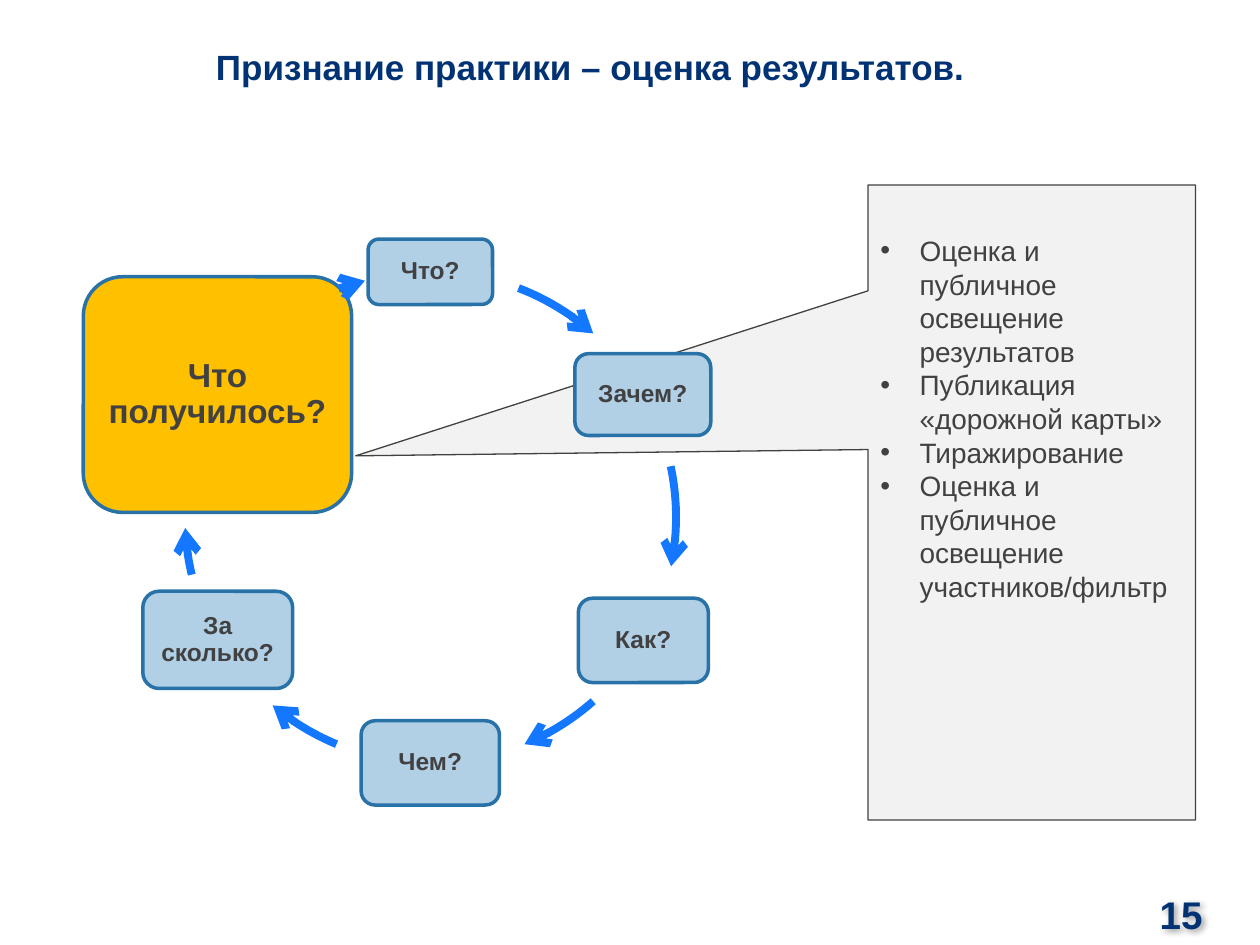
import math

import pptx
import pptx.dml.color
import pptx.enum.shapes
import pptx.enum.text
import pptx.oxml.ns
import pptx.util
from lxml import etree

Cm = pptx.util.Cm
Pt = pptx.util.Pt
SHAPE = pptx.enum.shapes.MSO_SHAPE
ALIGN = pptx.enum.text.PP_ALIGN
ANCHOR = pptx.enum.text.MSO_ANCHOR
qn = pptx.oxml.ns.qn

COLORS = {"navy": "003274", "text": "414142", "panel": "F2F2F2", "node": "B1CFE5",
          "edge": "2972A7", "result": "FFC000", "arrow": "1378FF", "shadow": "000000"}
CYCLE = [
    ("Что?", (5.74, 0, 2.51, 1.32), (-69, -48.5)),
    ("Зачем?", (9.91, 2.31, 2.74, 1.65), (-12, 11.5)),
    ("Как?", (9.98, 7.24, 2.62, 1.7), (48.5, 67.5)),
    ("Чем?", (5.6, 9.71, 2.79, 1.7), (112.5, 130)),
    ("За сколько?", (1.2, 7.1, 3.02, 1.96), (166.5, 177.5)),
    ("Что получилось?", (0, 0.76, 5.41, 4.75), (252, 254.5)),
]
CENTER, RADIUS = (7, 5.61), 4.95
OUTCOMES = [
    "Оценка и публичное освещение результатов",
    "Публикация «дорожной карты»",
    "Тиражирование",
    "Оценка и публичное освещение участников/фильтр",
]


def rgb(name):
    """Return the palette colour with this name."""
    return pptx.dml.color.RGBColor.from_string(COLORS[name])


def set_attrs(obj, values):
    """Set each attribute of obj named in values."""
    for name, value in values.items():
        setattr(obj, name, value)


def place(sp, box):
    """Move and size a shape to a box in centimetres."""
    set_attrs(sp, dict(zip(("left", "top", "width", "height"), map(Cm, box))))


def add_xml(parent, tag, **attrs):
    """Append a drawing element with the given attributes."""
    return etree.SubElement(parent, qn(f"a:{tag}"), {k: str(v) for k, v in attrs.items()})


def set_frame(tf, inset, **values):
    """Give a text frame equal margins, wrapping and centred anchoring."""
    margins = {f"margin_{side}": Cm(inset) for side in ("left", "top", "right", "bottom")}
    set_attrs(tf, {"word_wrap": True, "vertical_anchor": ANCHOR.MIDDLE, **margins, **values})


def write(p, text, color, size, bold=True, **values):
    """Write one formatted run into a paragraph."""
    r = p.add_run()
    r.text = text
    set_attrs(r.font, {"name": "Arial", "size": Pt(size), "bold": bold})
    r.font.color.rgb = rgb(color)
    set_attrs(p, values)


def add_box(s, kind, box, fill, line, width):
    """Add a filled and outlined preset shape without shadow."""
    sp = s.shapes.add_shape(kind, *map(Cm, box))
    sp.shadow.inherit = False
    sp.fill.solid()
    sp.fill.fore_color.rgb = rgb(fill)
    sp.line.color.rgb = rgb(line)
    sp.line.width = Pt(width)
    return sp


def add_title(s, box):
    """Place and fill the title placeholder."""
    sp = s.shapes.title
    place(sp, box)
    set_frame(sp.text_frame, 0)
    write(sp.text_frame.paragraphs[0], "Признание практики – оценка результатов.",
          "navy", 20, alignment=ALIGN.CENTER)


def add_number(s, box):
    """Add the page number with a soft shadow."""
    sp = s.shapes.add_textbox(*map(Cm, box))
    effects = add_xml(sp._element.spPr, "effectLst")
    shadow = add_xml(effects, "outerShdw", blurRad=Pt(4), dist=Pt(2), dir=2700000)
    add_xml(add_xml(shadow, "srgbClr", val=COLORS["shadow"]), "alpha", val=40000)
    set_frame(sp.text_frame, 0, margin_right=Cm(0.45))
    write(sp.text_frame.paragraphs[0], "15", "navy", 22, alignment=ALIGN.RIGHT)


def add_callout(s, box):
    """Add the callout with the bulleted outcomes."""
    sp = add_box(s, SHAPE.RECTANGULAR_CALLOUT, box, "panel", "text", 0.75)
    tip = (-13.63, -0.94)
    for i in range(2):
        sp.adjustments[i] = tip[i] / box[2 + i]
    tf = sp.text_frame
    set_frame(tf, 0.25, margin_top=Cm(0.98), vertical_anchor=ANCHOR.TOP)
    for i, text in enumerate(OUTCOMES):
        p = tf.add_paragraph() if i else tf.paragraphs[0]
        ppr = p._p.get_or_add_pPr()
        ppr.set("marL", str(Cm(0.79)))
        ppr.set("indent", str(-Cm(0.79)))
        add_xml(ppr, "buFont", typeface="Arial")
        add_xml(ppr, "buChar", char="•")
        write(p, text, "text", 16, bold=False, alignment=ALIGN.LEFT)


def add_node(s, box, text, fill, size, inset):
    """Add one rounded step of the cycle."""
    sp = add_box(s, SHAPE.ROUNDED_RECTANGLE, box, fill, "edge", 2)
    set_frame(sp.text_frame, inset)
    write(sp.text_frame.paragraphs[0], text, "text", size,
          alignment=ALIGN.CENTER, line_spacing=0.9)


def add_arc(s, box, start, end, steps=12):
    """Add an arrow along the circle inscribed in a square box, between two angles."""
    radius = Cm(box[2] / 2)
    angles = [math.radians(start + (end - start) * i / steps) for i in range(steps + 1)]
    points = [(round(radius * (1 + math.cos(a))), round(radius * (1 + math.sin(a))))
              for a in angles]
    fb = s.shapes.build_freeform(*points[0])
    fb.add_line_segments(points[1:], close=False)
    sp = fb.convert_to_shape()
    place(sp, box)
    outline = sp._element.find(f".//{qn('a:path')}")
    set_size = {"w": str(2 * radius), "h": str(2 * radius)}
    outline.attrib.update(set_size)
    for pt, (x, y) in zip(outline.iter(qn("a:pt")), points):
        pt.attrib.update({"x": str(x), "y": str(y)})
    sp.shadow.inherit = False
    sp.fill.background()
    sp.line.color.rgb = rgb("arrow")
    sp.line.width = Pt(4.5)
    add_xml(sp.line._get_or_add_ln(), "tailEnd", type="arrow")


def add_cycle(s, box):
    """Add the question cycle, its last step enlarged and highlighted."""
    left, top = box[:2]
    ring = (left + CENTER[0] - RADIUS, top + CENTER[1] - RADIUS, 2 * RADIUS, 2 * RADIUS)
    for text, (x, y, w, h), angles in CYCLE:
        last = text == CYCLE[-1][0]
        style = ("result", 19, 0.2) if last else ("node", 14, 0.15)
        add_node(s, (left + x, top + y, w, h), text, *style)
        add_arc(s, ring, *angles)


def main():
    """Build the slide and save it."""
    prs = pptx.Presentation()
    prs.slide_width, prs.slide_height = Cm(25.4), Cm(19.05)
    s = prs.slides.add_slide(prs.slide_layouts[5])
    add_title(s, (1.3, 0, 21.2, 2.67))
    add_number(s, (22.94, 17.9, 1.75, 1.04))
    add_callout(s, (17.5, 3.73, 6.6, 12.8))
    add_cycle(s, (1.68, 4.82, 12.72, 11.4))
    prs.save("out.pptx")


if __name__ == "__main__":
    main()
